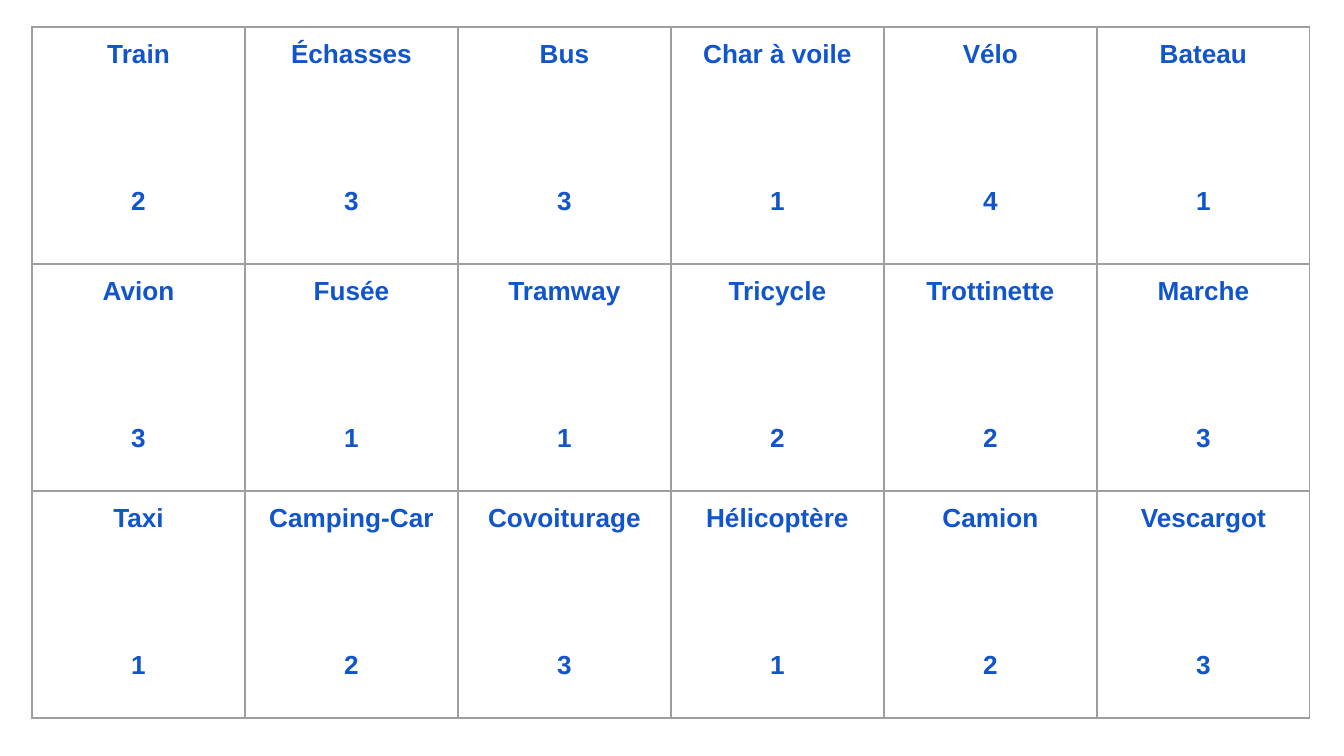
from lxml.etree import SubElement
from pptx import Presentation
from pptx.dml.color import RGBColor
from pptx.enum.text import MSO_ANCHOR, PP_ALIGN
from pptx.oxml.ns import qn
from pptx.util import Emu, Pt

SLIDE_WIDTH, SLIDE_HEIGHT = 1344, 756
EMU_PER_PX = 9144000 / SLIDE_WIDTH

LEFT, TOP = 32, 27
COLUMN_WIDTH = 213
ROW_HEIGHTS = [237, 227, 227]
MARGIN = 13

BLUE = "1155CC"
GREY = "9E9E9E"

# Each transport with its number, row by row
TRANSPORTS = [
    [("Train", 2), ("Échasses", 3), ("Bus", 3),
     ("Char à voile", 1), ("Vélo", 4), ("Bateau", 1)],
    [("Avion", 3), ("Fusée", 1), ("Tramway", 1),
     ("Tricycle", 2), ("Trottinette", 2), ("Marche", 3)],
    [("Taxi", 1), ("Camping-Car", 2), ("Covoiturage", 3),
     ("Hélicoptère", 1), ("Camion", 2), ("Vescargot", 3)],
]


def px(length):
    return Emu(round(length * EMU_PER_PX))


def colour(hex_code):
    return RGBColor.from_string(hex_code)


def add_line(paragraph, text):
    paragraph.alignment = PP_ALIGN.CENTER
    run = paragraph.add_run()
    run.text = text
    run.font.name = "Arial"
    run.font.size = Pt(14)
    run.font.bold = True
    run.font.color.rgb = colour(BLUE)


def add_borders(cell):
    properties = cell._tc.get_or_add_tcPr()
    for side in ("lnL", "lnR", "lnT", "lnB"):
        border = SubElement(properties, qn(f"a:{side}"), w=str(Pt(0.75)))
        fill = SubElement(border, qn("a:solidFill"))
        SubElement(fill, qn("a:srgbClr"), val=GREY)


def fill_card(cell, transport, number):
    cell.margin_left = cell.margin_right = px(MARGIN)
    cell.margin_top = cell.margin_bottom = px(MARGIN)
    cell.vertical_anchor = MSO_ANCHOR.TOP
    add_borders(cell)
    cell.fill.background()

    frame = cell.text_frame
    add_line(frame.paragraphs[0], transport)
    number_line = frame.add_paragraph()
    number_line.space_before = Pt(63)
    add_line(number_line, str(number))


def add_card_table(slide):
    columns = len(TRANSPORTS[0])
    cards = slide.shapes.add_table(
        len(TRANSPORTS), columns, px(LEFT), px(TOP),
        px(columns * COLUMN_WIDTH), px(sum(ROW_HEIGHTS))).table
    cards.first_row = False
    cards.horz_banding = False
    for column in cards.columns:
        column.width = px(COLUMN_WIDTH)
    for row, height, transports in zip(cards.rows, ROW_HEIGHTS, TRANSPORTS):
        row.height = px(height)
        for cell, (transport, number) in zip(row.cells, transports):
            fill_card(cell, transport, number)


def main():
    presentation = Presentation()
    presentation.slide_width = px(SLIDE_WIDTH)
    presentation.slide_height = px(SLIDE_HEIGHT)
    slide = presentation.slides.add_slide(presentation.slide_layouts[6])
    add_card_table(slide)
    presentation.save("out.pptx")


if __name__ == "__main__":
    main()
